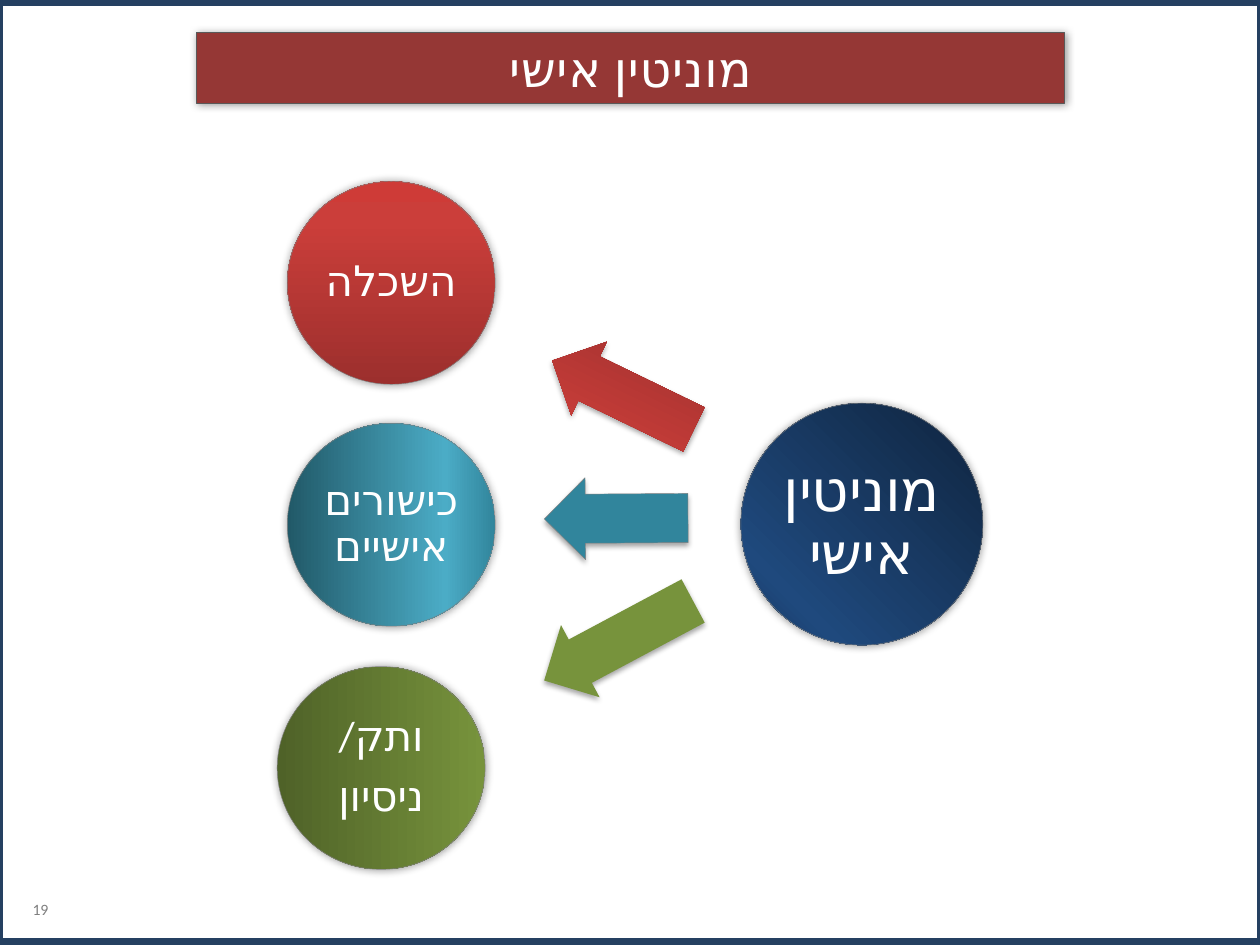
"""Build the personal reputation slide: three sources beside one central circle."""
from lxml import etree
from pptx import Presentation
from pptx.dml.color import RGBColor
from pptx.enum import shapes, text
from pptx.oxml.ns import qn
from pptx.util import Inches, Pt

WHITE = RGBColor(0xFF, 0xFF, 0xFF)
FRAME = RGBColor(0x25, 0x40, 0x61)
NUMBER_GRAY = RGBColor(0x7F, 0x7F, 0x7F)
OUTLINE = RGBColor(0x80, 0x80, 0x80)
TITLE_FILL = RGBColor(0x95, 0x37, 0x35)
TITLE_LINE = RGBColor(0x59, 0x59, 0x59)
TEAL = RGBColor(0x31, 0x85, 0x9C)
GREEN = RGBColor(0x77, 0x93, 0x3C)
NAVY_STOPS = [(0, RGBColor(0x0F, 0x24, 0x3E)), (80, RGBColor(0x1F, 0x49, 0x7D)), (100, RGBColor(0x17, 0x37, 0x5E))]
RED_STOPS = [(0, RGBColor(0x9C, 0x2F, 0x2D)), (80, RGBColor(0xCB, 0x3E, 0x3A)), (100, RGBColor(0xCE, 0x3B, 0x37))]
TEAL_STOPS = [(0, RGBColor(0x21, 0x59, 0x68)), (76, RGBColor(0x4B, 0xAC, 0xC6)), (100, TEAL)]
GREEN_STOPS = [(0, RGBColor(0x4F, 0x62, 0x28)), (100, GREEN)]
CIRCLE_SHADOW = (40, 5, 0, 0)
ARROW_SHADOW = (35, 3.1, 1.8, 90)

presentation = Presentation()
presentation.slide_width = Inches(10)
presentation.slide_height = Inches(7.5)
slide = presentation.slides.add_slide(presentation.slide_layouts[6])


def add_figure(kind, box, fill, angle, line, line_width, shadow):
    shape = slide.shapes.add_shape(kind, *[Inches(value) for value in box])
    if isinstance(fill, list):
        shape.fill.gradient()
        shape.fill.gradient_angle = angle
        stops = shape._element.spPr.find(qn("a:gradFill")).find(qn("a:gsLst"))
        for stop in list(stops):
            stops.remove(stop)
        for position, color in fill:
            stop = etree.SubElement(stops, qn("a:gs"), pos=str(position * 1000))
            etree.SubElement(stop, qn("a:srgbClr"), val=str(color))
    elif fill is None:
        shape.fill.background()
    else:
        shape.fill.solid()
        shape.fill.fore_color.rgb = fill
    if line is None:
        shape.line.fill.background()
    else:
        shape.line.color.rgb = line
        shape.line.width = Pt(line_width)
    shape.shadow.inherit = False
    if shadow:
        alpha, blur, distance, direction = shadow
        effects = shape._element.spPr.find(qn("a:effectLst"))
        outer = etree.SubElement(effects, qn("a:outerShdw"), blurRad=str(Pt(blur)), dist=str(Pt(distance)),
                                 dir=str(direction * 60000), algn="ctr", rotWithShape="0")
        color = etree.SubElement(outer, qn("a:srgbClr"), val="000000")
        etree.SubElement(color, qn("a:alpha"), val=str(alpha * 1000))
    return shape


def write_hebrew(shape, lines, size, inset=None, line_spacing=None, space_after=0, tracking=0):
    frame = shape.text_frame
    frame.word_wrap = True
    frame.vertical_anchor = text.MSO_ANCHOR.MIDDLE
    if inset is not None:
        frame.margin_left = frame.margin_right = frame.margin_top = frame.margin_bottom = Inches(inset)
    for index, line in enumerate(lines):
        paragraph = frame.add_paragraph() if index else frame.paragraphs[0]
        paragraph.alignment = text.PP_ALIGN.CENTER
        paragraph.line_spacing = line_spacing
        paragraph.space_after = Pt(space_after)
        paragraph._p.get_or_add_pPr().set("rtl", "1")
        run = paragraph.add_run()
        run.text = line
        run.font.size = Pt(size)
        run.font.name = "Calibri"
        run.font.color.rgb = WHITE
        properties = run._r.get_or_add_rPr()
        properties.set("lang", "he-IL")
        properties.set("spc", str(tracking))
        etree.SubElement(properties, qn("a:cs"), typeface="Calibri")


add_figure(shapes.MSO_SHAPE.RECTANGLE, (-0.02, 0.01, 10.04, 7.48), None, 0, FRAME, 6, None)

number_box = slide.shapes.add_textbox(Inches(0.16), Inches(7.09), Inches(0.62), Inches(0.25))
number_box.text_frame.word_wrap = True
number = number_box.text_frame.paragraphs[0].add_run()
number.text = "19"
number.font.size = Pt(9)
number.font.name = "Calibri"
number.font.color.rgb = NUMBER_GRAY

title = add_figure(shapes.MSO_SHAPE.ROUNDED_RECTANGLE, (1.56, 0.26, 6.89, 0.56), TITLE_FILL, 0,
                   TITLE_LINE, 0.75, CIRCLE_SHADOW)
title.adjustments[0] = 0
write_hebrew(title, ["מוניטין אישי"], 28, tracking=50)

arrows = [
    ((4.32, 2.81, 1.25, 0.65), 205.9, RED_STOPS, None),
    ((4.32, 3.79, 1.14, 0.65), 179.6, TEAL, OUTLINE),
    ((4.24, 4.76, 1.34, 0.65), 151.9, GREEN, None),
]
for box, rotation, fill, line in arrows:
    arrow = add_figure(shapes.MSO_SHAPE.RIGHT_ARROW, box, fill, 90, line, 0.25, ARROW_SHADOW)
    arrow.adjustments[0] = 0.6
    arrow.adjustments[1] = 0.5
    arrow.rotation = rotation

circles = [
    ((5.88, 3.2, 1.92, 1.92), NAVY_STOPS, 225, ["מוניטין אישי"], 33, 0.05),
    ((2.28, 1.44, 1.65, 1.61), RED_STOPS, 90, ["השכלה"], 24, 0.03),
    ((2.28, 3.36, 1.65, 1.61), TEAL_STOPS, 0, ["כישורים אישיים"], 24, 0.03),
    ((2.2, 5.29, 1.65, 1.61), GREEN_STOPS, 0, ["ותק/", "ניסיון"], 24, 0.03),
]
for box, stops, angle, lines, size, inset in circles:
    circle = add_figure(shapes.MSO_SHAPE.OVAL, box, stops, angle, OUTLINE, 0.25, CIRCLE_SHADOW)
    write_hebrew(circle, lines, size, inset, line_spacing=0.9, space_after=round(size * 0.35, 1))

presentation.save("out.pptx")
